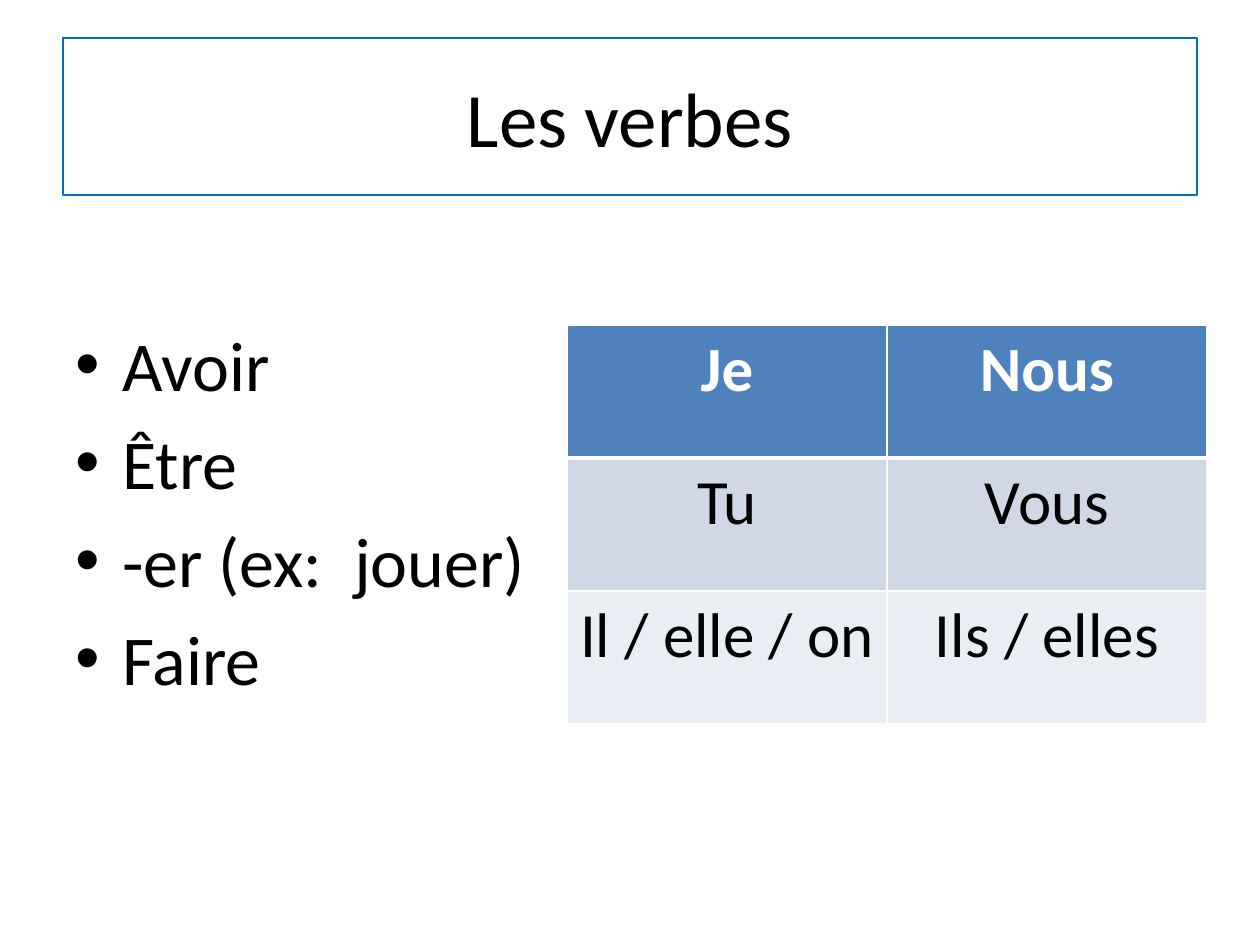
import lxml.etree
import pptx
import pptx.dml.color
import pptx.enum.text
import pptx.oxml
import pptx.oxml.ns
import pptx.util

SCALE = 914400 / 126
BLACK = pptx.dml.color.RGBColor(0x00, 0x00, 0x00)
WHITE = pptx.dml.color.RGBColor(0xFF, 0xFF, 0xFF)
OUTLINE = pptx.dml.color.RGBColor(0x00, 0x70, 0xC0)
HEADER = pptx.dml.color.RGBColor(0x4F, 0x81, 0xBD)
BAND_DARK = pptx.dml.color.RGBColor(0xD0, 0xD8, 0xE8)
BAND_LIGHT = pptx.dml.color.RGBColor(0xE9, 0xED, 0xF4)
CENTER = pptx.enum.text.PP_ALIGN.CENTER
LEFT = pptx.enum.text.PP_ALIGN.LEFT

VERBS = ["Avoir", "Être", "-er (ex:  jouer)", "Faire"]
PRONOUNS = [("Je", "Nous"), ("Tu", "Vous"), ("Il / elle / on", "Ils / elles")]
ROW_FILLS = [HEADER, BAND_DARK, BAND_LIGHT]


def px(length):
    """Turn pixels into EMU."""
    return pptx.util.Emu(round(length * SCALE))


def write(para, text, size, color=BLACK, bold=False, align=LEFT):
    """Put one formatted span into a paragraph."""
    para.alignment = align
    span = para.add_run()
    span.text = text
    span.font.color.rgb = color
    formats = {"name": "Calibri", "size": pptx.util.Pt(size), "bold": bold}
    for name, value in formats.items():
        setattr(span.font, name, value)


def add_title(slide, text, box):
    """Place and outline the title."""
    title = slide.shapes.title
    for name, value in zip(("left", "top", "width", "height"), box):
        setattr(title, name, px(value))
    title.line.color.rgb = OUTLINE
    title.line.width = pptx.util.Pt(0.75)
    title.text_frame.vertical_anchor = pptx.enum.text.MSO_ANCHOR.MIDDLE
    write(title.text_frame.paragraphs[0], text, 44, align=CENTER)


def add_bullets(slide, items, box):
    """Add the bulleted list of verbs."""
    frame = slide.shapes.add_textbox(*map(px, box)).text_frame
    frame.word_wrap = True
    for index, item in enumerate(items):
        para = frame.add_paragraph() if index else frame.paragraphs[0]
        write(para, item, 40)
        para.space_before = pptx.util.Pt(8)
        properties = para._p.get_or_add_pPr()
        properties.set("marL", str(px(47)))
        properties.set("indent", str(-px(47)))
        font = lxml.etree.SubElement(properties, pptx.oxml.ns.qn("a:buFont"))
        font.set("typeface", "Arial")
        bullet = lxml.etree.SubElement(properties, pptx.oxml.ns.qn("a:buChar"))
        bullet.set("char", "•")


def add_borders(cell, widths):
    """Draw white cell borders with widths in points for each side."""
    properties = cell._tc.get_or_add_tcPr()
    for index, (side, width) in enumerate(widths.items()):
        border = pptx.oxml.parse_xml(
            f'<a:ln{side} {pptx.oxml.ns.nsdecls("a")} w="{pptx.util.Pt(width)}">'
            f'<a:solidFill><a:srgbClr val="{WHITE}"/></a:solidFill></a:ln{side}>'
        )
        properties.insert(index, border)


def add_pronouns(slide, rows, box):
    """Add the pronoun table with a header row."""
    table = slide.shapes.add_table(len(rows), len(rows[0]), *map(px, box)).table
    for row, texts in enumerate(rows):
        header = row == 0
        widths = {"L": 1, "R": 1, "T": 3 if row == 1 else 1, "B": 3 if header else 1}
        for column, text in enumerate(texts):
            cell = table.cell(row, column)
            cell.fill.solid()
            cell.fill.fore_color.rgb = ROW_FILLS[row]
            color = WHITE if header else BLACK
            write(cell.text_frame.paragraphs[0], text, 36, color, header, CENTER)
            add_borders(cell, widths)


def main():
    """Build and save the deck."""
    deck = pptx.Presentation()
    deck.slide_width, deck.slide_height = px(1260), px(945)
    slide = deck.slides.add_slide(deck.slide_layouts[5])
    add_title(slide, "Les verbes", (63, 38, 1134, 157))
    add_bullets(slide, VERBS, (63, 315, 1134, 529))
    add_pronouns(slide, PRONOUNS, (567, 325, 640, 399))
    deck.save("out.pptx")


if __name__ == "__main__":
    main()
